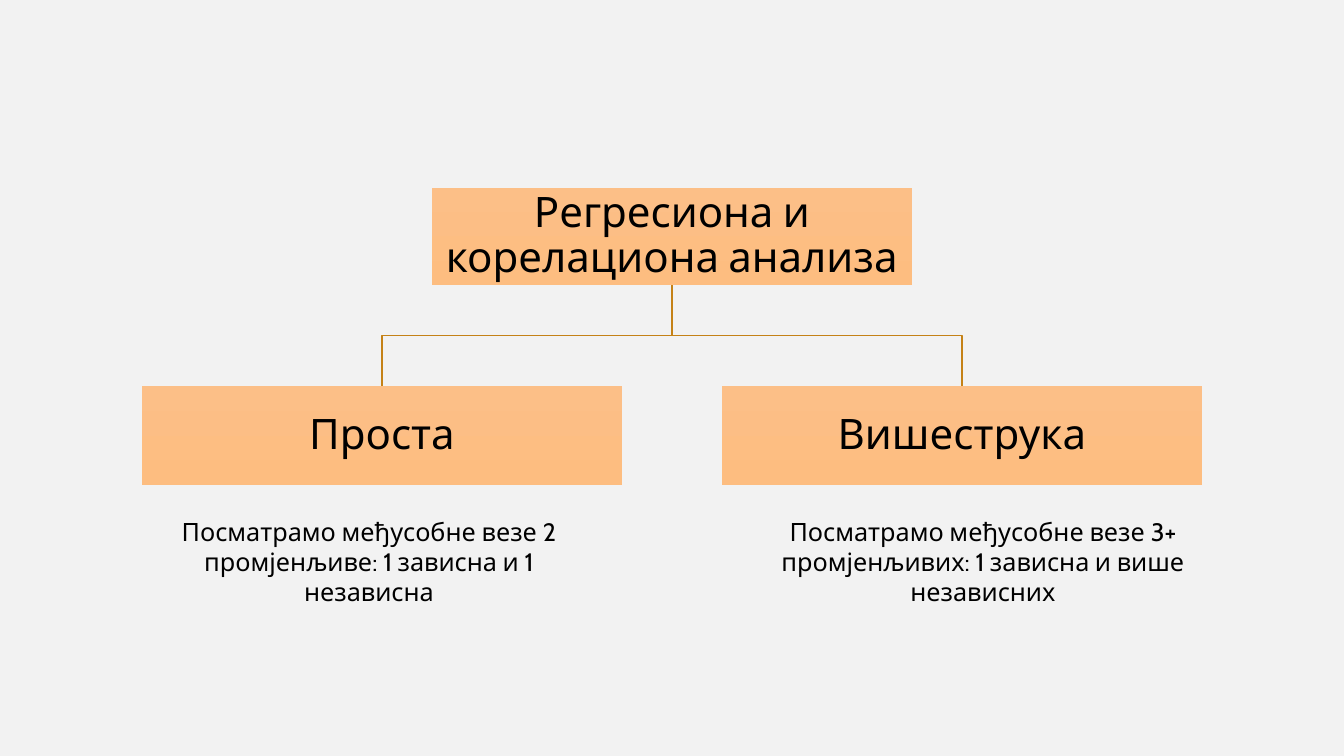
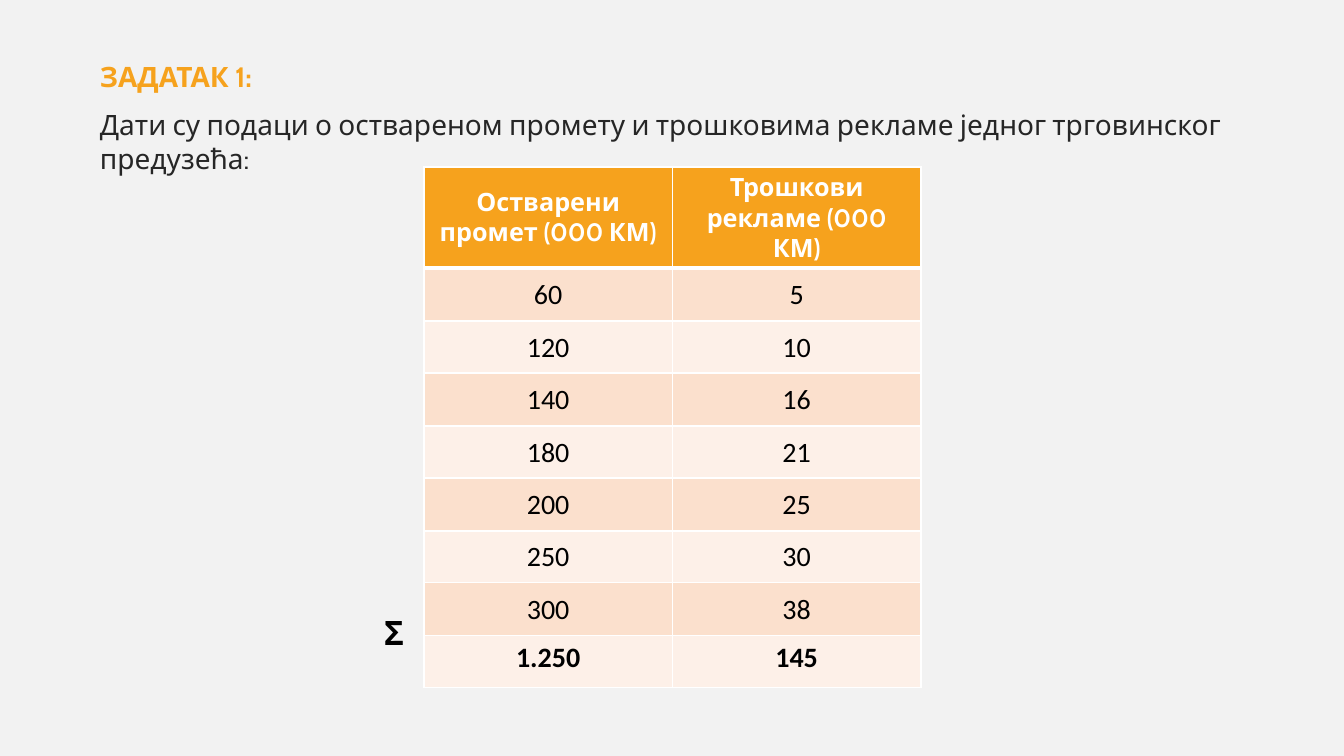
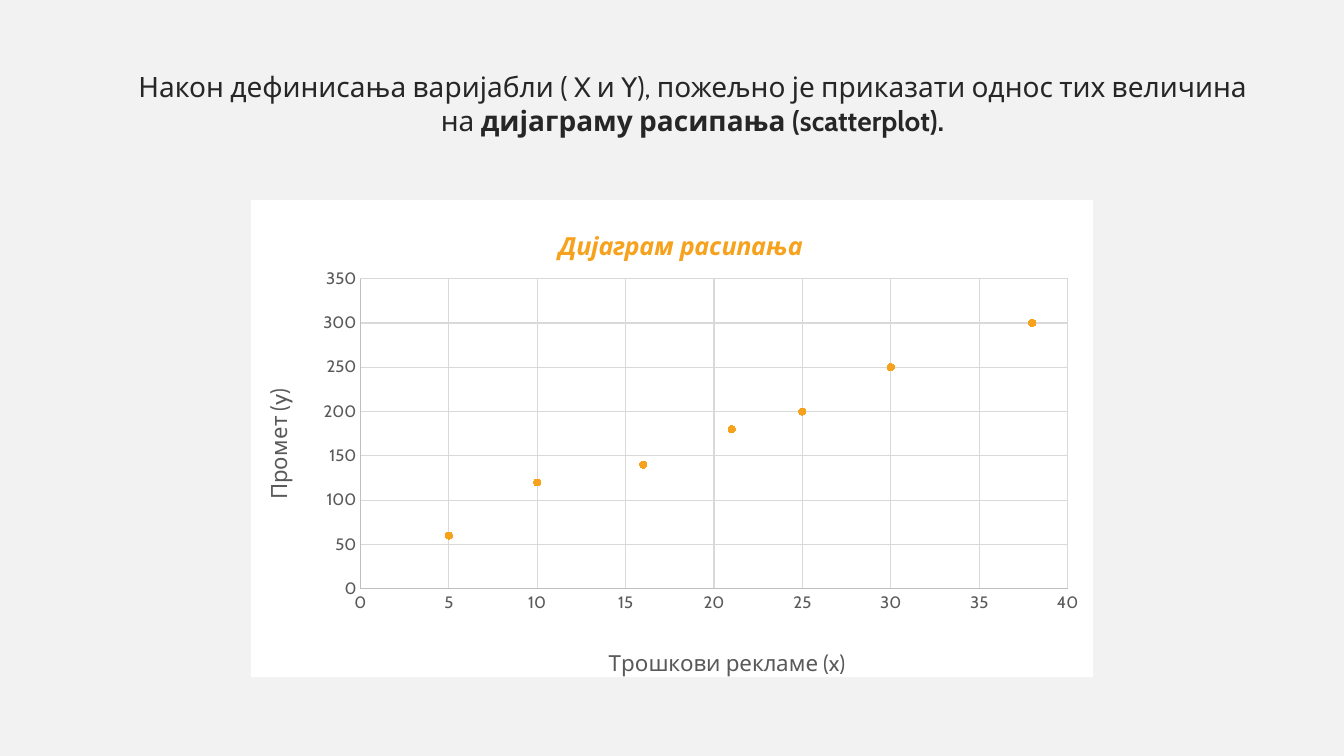
from lxml.etree import SubElement
from pptx import Presentation
from pptx.chart.data import XyChartData
from pptx.dml.color import RGBColor
from pptx.enum.chart import XL_CHART_TYPE, XL_MARKER_STYLE, XL_TICK_MARK
from pptx.enum.shapes import MSO_SHAPE
from pptx.enum.text import MSO_ANCHOR, PP_ALIGN
from pptx.oxml import parse_xml
from pptx.oxml.ns import nsdecls, qn
from pptx.util import Pt

SCALE = 914400 / 100.8
PAGE_WIDTH, PAGE_HEIGHT = 1344, 756
FONT = "Cabin"
COLORS = {
    "page": "F2F2F2",
    "accent": "F6A21D",
    "body": "262626",
    "black": "000000",
    "white": "FFFFFF",
    "box_top": "FCBF87",
    "box_bottom": "FDBD80",
    "branch": "C58217",
    "band_dark": "FBE0CD",
    "band_light": "FDF0E8",
    "axis_text": "595959",
    "axis_line": "BFBFBF",
    "grid": "D9D9D9",
}
TURNOVER = [60, 120, 140, 180, 200, 250, 300]
ADVERTISING = [5, 10, 16, 21, 25, 30, 38]


def px(length):
    return round(length * SCALE)


def color(name):
    return RGBColor.from_string(COLORS[name])


def write(para, text, size=20, ink="black", font=FONT, bold=False, italic=False,
          align=None, before=None, spacing=None):
    """Add one span of text to a paragraph."""
    span = para.add_run()
    span.text = text
    span.font.size = Pt(size)
    span.font.name = font
    span.font.bold = bold
    span.font.italic = italic
    span.font.color.rgb = color(ink)
    if align is not None:
        para.alignment = align
    if before is not None:
        para.space_before = Pt(before)
    if spacing is not None:
        para.line_spacing = spacing


def add_text_box(page, left, top, width, height):
    """Return the frame of a new wrapping text box."""
    box = page.shapes.add_textbox(px(left), px(top), px(width), px(height))
    box.text_frame.word_wrap = True
    return box.text_frame


def set_line(line, ink, width):
    line.color.rgb = color(ink)
    line.width = Pt(width)


def add_page(deck):
    return deck.slides.add_slide(deck.slide_layouts[6])


# Hierarchy

def add_node(page, text, left, top, width, height):
    node = page.shapes.add_shape(MSO_SHAPE.RECTANGLE, px(left), px(top), px(width), px(height))
    node.shadow.inherit = False
    node.line.fill.background()
    node.fill.gradient()
    node.fill.gradient_angle = 270
    for stop, ink in zip(node.fill.gradient_stops, ("box_top", "box_bottom")):
        stop.color.rgb = color(ink)
    frame = node.text_frame
    frame.word_wrap = True
    frame.vertical_anchor = MSO_ANCHOR.MIDDLE
    frame.margin_left = frame.margin_right = frame.margin_top = frame.margin_bottom = px(2)
    write(frame.paragraphs[0], text, size=30, align=PP_ALIGN.CENTER, spacing=0.9)


def add_branch(page, start_x, start_y, end_x, end_y):
    """Draw an open elbow that turns halfway down."""
    middle = (start_y + end_y) / 2
    builder = page.shapes.build_freeform(px(start_x), px(start_y))
    corners = [(start_x, middle), (end_x, middle), (end_x, end_y)]
    builder.add_line_segments([(px(x), px(y)) for x, y in corners], close=False)
    branch = builder.convert_to_shape()
    branch.shadow.inherit = False
    branch.fill.background()
    set_line(branch.line, "branch", 1)


def add_hierarchy(page, root, children, left, top, width):
    node_width, root_height, child_height, drop = 480, 97, 99, 101
    center = left + width / 2
    child_top = top + root_height + drop
    step = (width - node_width) / (len(children) - 1)
    lefts = [left + index * step for index in range(len(children))]
    for child_left in lefts:
        add_branch(page, center, top + root_height, child_left + node_width / 2, child_top)
    add_node(page, root, center - node_width / 2, top, node_width, root_height)
    for text, child_left in zip(children, lefts):
        add_node(page, text, child_left, child_top, node_width, child_height)


def build_types_page(deck):
    page = add_page(deck)
    add_hierarchy(page, "Регресиона и корелациона анализа", ["Проста", "Вишеструка"],
                  142, 188, 1060)
    captions = [
        (128, "Посматрамо међусобне везе 2 промјенљиве: 1 зависна и 1 независна"),
        (742, "Посматрамо међусобне везе 3+ промјенљивих: 1 зависна и више независних"),
    ]
    for left, text in captions:
        frame = add_text_box(page, left, 511, 482, 102)
        write(frame.paragraphs[0], text, size=18, align=PP_ALIGN.CENTER)


# Data table

def set_borders(cell, bottom):
    properties = cell._tc.get_or_add_tcPr()
    for side, width in (("L", 1), ("R", 1), ("T", 1), ("B", bottom)):
        line = SubElement(properties, qn(f"a:ln{side}"), w=str(Pt(width)))
        fill = SubElement(line, qn("a:solidFill"))
        SubElement(fill, qn("a:srgbClr"), val=COLORS["white"])


def fill_cell(cell, text, row, last_row):
    header, total = row == 0, row == last_row
    set_borders(cell, 3 if header else 1)
    cell.fill.solid()
    band = "band_dark" if row % 2 else "band_light"
    cell.fill.fore_color.rgb = color("accent" if header else band)
    if not total:
        cell.vertical_anchor = MSO_ANCHOR.MIDDLE
    if not header and not total:
        cell.margin_left = cell.margin_right = cell.margin_top = px(1)
        cell.margin_bottom = 0
    style = {"size": 18, "ink": "white"} if header else {"font": "Calibri"}
    write(cell.text_frame.paragraphs[0], text, bold=header or total,
          align=PP_ALIGN.CENTER, **style)


def add_data_table(page, rows, left, top, width):
    header_height, row_height = 101, 52
    height = header_height + row_height * (len(rows) - 1)
    table = page.shapes.add_table(len(rows), len(rows[0]), px(left), px(top),
                                  px(width), px(height)).table
    for row, values in enumerate(rows):
        table.rows[row].height = px(row_height + row % 2 if row else header_height)
        for column, text in enumerate(values):
            fill_cell(table.cell(row, column), text, row, len(rows) - 1)


def build_task_page(deck):
    page = add_page(deck)
    frame = add_text_box(page, 90, 55, 1163, 639)
    write(frame.paragraphs[0], "ЗАДАТАК 1:", ink="accent", bold=True, before=10)
    write(frame.add_paragraph(),
          "Дати су подаци о оствареном промету и трошковима рекламе једног "
          "трговинског предузећа:", ink="body", before=10)
    rows = [("Остварени промет (000 КМ)", "Трошкови рекламе (000 КМ)")]
    rows += [(str(y), str(x)) for y, x in zip(TURNOVER, ADVERTISING)]
    rows.append(("1.250", "145"))
    add_data_table(page, rows, 424, 167, 497)
    sigma = add_text_box(page, 346, 607, 96, 50)
    write(sigma.paragraphs[0], "Σ", size=24, bold=True, align=PP_ALIGN.CENTER)


# Scatter chart

def set_layout(element, index, **fractions):
    """Give a chart part a manual layout, in fractions of the chart."""
    for old in element.findall(qn("c:layout")):
        element.remove(old)
    layout = element.makeelement(qn("c:layout"))
    element.insert(index, layout)
    manual = SubElement(layout, qn("c:manualLayout"))
    if "w" in fractions:
        SubElement(manual, qn("c:layoutTarget"), val="inner")
    for mode in ("xMode", "yMode"):
        SubElement(manual, qn(f"c:{mode}"), val="edge")
    for name, value in fractions.items():
        SubElement(manual, qn(f"c:{name}"), val=str(value))


def set_title(title, text, x, y, **style):
    write(title.text_frame.paragraphs[0], text, **style)
    set_layout(title._element, 1, x=x, y=y)


def style_axis(axis, maximum, step, title, x, y):
    axis.minimum_scale, axis.maximum_scale, axis.major_unit = 0, maximum, step
    axis.major_tick_mark = axis.minor_tick_mark = XL_TICK_MARK.NONE
    axis.has_major_gridlines = True
    set_line(axis.major_gridlines.format.line, "grid", 0.75)
    set_line(axis.format.line, "axis_line", 0.75)
    font = axis.tick_labels.font
    font.size, font.name, font.color.rgb = Pt(12), FONT, color("axis_text")
    set_title(axis.axis_title, title, x, y, size=16, ink="axis_text")


def add_scatter(page, left, top, width, height):
    data = XyChartData()
    points = data.add_series("Series 1")
    for x, y in zip(ADVERTISING, TURNOVER):
        points.add_data_point(x, y)
    chart = page.shapes.add_chart(XL_CHART_TYPE.XY_SCATTER, px(left), px(top),
                                  px(width), px(height), data).chart
    chart.has_legend = False
    chart.font.name, chart.font.size = FONT, Pt(10)
    chart._chartSpace.chart.addnext(parse_xml(
        f'<c:spPr {nsdecls("c", "a")}><a:solidFill><a:srgbClr val="{COLORS["white"]}"/>'
        "</a:solidFill><a:ln><a:noFill/></a:ln></c:spPr>"))
    chart.has_title = True
    set_title(chart.chart_title, "Дијаграм расипања", 0.36, 0.05,
              size=18, ink="accent", bold=True, italic=True)
    style_axis(chart.category_axis, 40, 5, "Трошкови рекламе (x)", 0.42, 0.93)
    style_axis(chart.value_axis, 350, 50, "Промет (y)", 0.01, 0.39)
    rotation = chart.value_axis.axis_title.text_frame._txBody.bodyPr
    rotation.set("rot", "-5400000")
    rotation.set("vert", "horz")
    set_layout(chart._chartSpace.chart.plotArea, 0, x=0.13, y=0.165, w=0.84, h=0.65)

    plot = chart.plots[0]
    plot.vary_by_categories = False
    series = plot.series[0]
    series.format.line.fill.background()
    series.marker.style, series.marker.size = XL_MARKER_STYLE.CIRCLE, 5
    series.marker.format.fill.solid()
    series.marker.format.fill.fore_color.rgb = color("accent")
    set_line(series.marker.format.line, "accent", 0.75)


def build_scatter_page(deck):
    page = add_page(deck)
    para = add_text_box(page, 124, 65, 1137, 90).paragraphs[0]
    write(para, "Након дефинисања варијабли ( X и Y), пожељно је приказати однос тих "
                "величина на ", ink="body", align=PP_ALIGN.CENTER, before=10)
    write(para, "дијаграму расипања (scatterplot).", ink="body", bold=True)
    add_scatter(page, 251, 200, 842, 483)


def main():
    deck = Presentation()
    deck.slide_width, deck.slide_height = px(PAGE_WIDTH), px(PAGE_HEIGHT)
    background = deck.slide_master.background.fill
    background.solid()
    background.fore_color.rgb = color("page")
    build_types_page(deck)
    build_task_page(deck)
    build_scatter_page(deck)
    deck.save("out.pptx")


if __name__ == "__main__":
    main()
